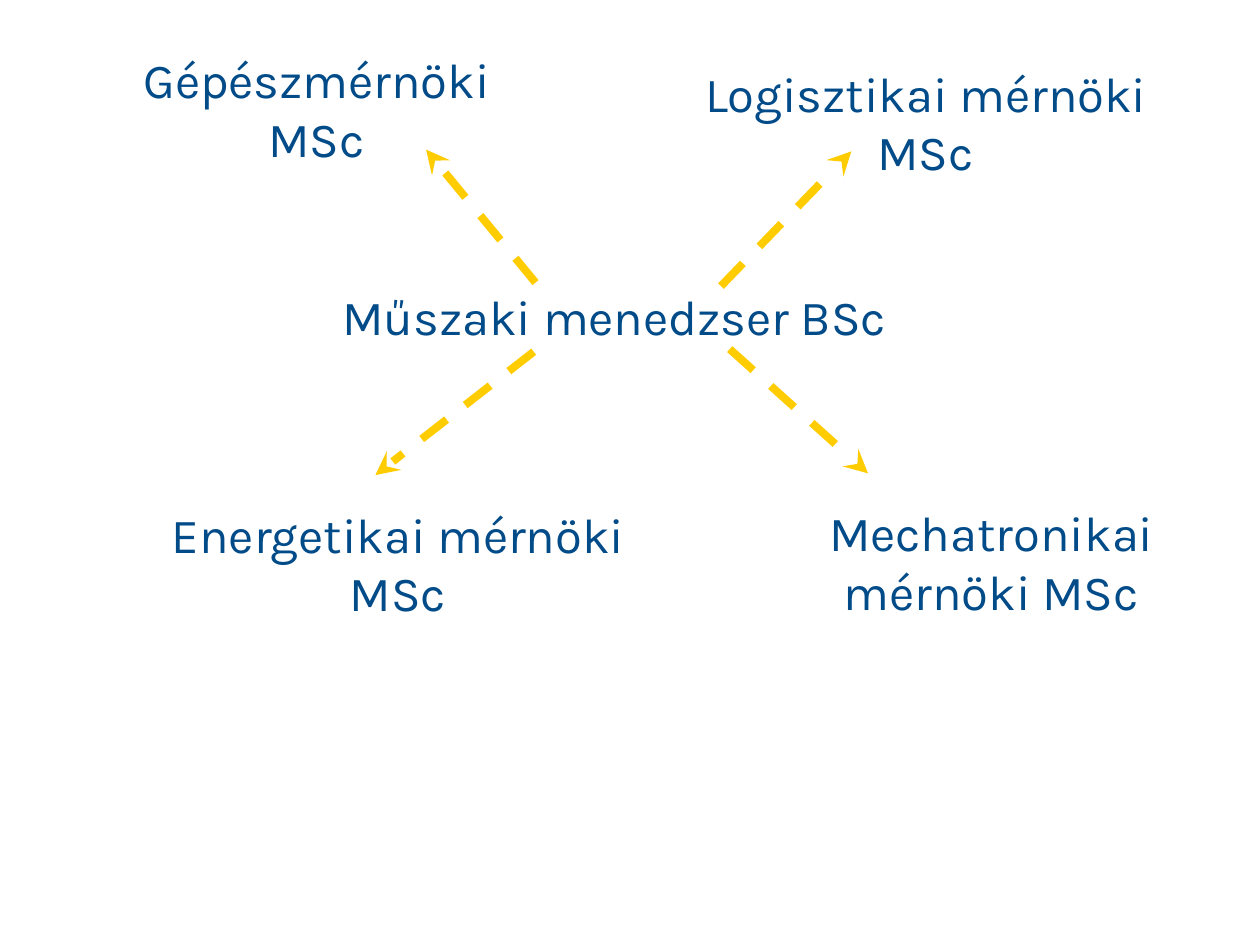
from lxml.etree import SubElement
from pptx import Presentation
from pptx.dml.color import RGBColor
from pptx.enum.dml import MSO_LINE
from pptx.enum.shapes import MSO_CONNECTOR
from pptx.enum.text import MSO_AUTO_SIZE, PP_ALIGN
from pptx.oxml.ns import qn
from pptx.util import Pt

BLUE = RGBColor(0x01, 0x4B, 0x89)
GOLD = RGBColor(0xFF, 0xCC, 0x00)

LABELS = [
    ("Műszaki menedzser BSc", 25, 160, 652, 41),
    ("Energetikai mérnöki MSc", 69, 284.5, 317, 75),
    ("Logisztikai mérnöki MSc", 390, 32.5, 278, 75),
    ("Gépészmérnöki MSc", 58, 25, 246, 75),
    ("Mechatronikai mérnöki MSc", 413, 283.5, 307, 126),
]
ARROWS = [
    (305, 201, 214.5, 271.5),
    (417, 199.5, 496, 270.5),
    (412, 163.5, 486.5, 86.5),
    (306, 161.5, 243.5, 85.5),
]


class Board:
    """Draw degree labels and dashed arrows on one slide."""

    font = {"name": "Karla", "size": Pt(28)}
    frame = {"word_wrap": True, "auto_size": MSO_AUTO_SIZE.SHAPE_TO_FIT_TEXT}
    line = {"width": Pt(4.5), "dash_style": MSO_LINE.DASH}

    def __init__(self, slide):
        self.slide = slide

    def apply(self, item, style):
        for key, value in style.items():
            setattr(item, key, value)

    def label(self, text, *box):
        frame = self.slide.shapes.add_textbox(*map(Pt, box)).text_frame
        self.apply(frame, self.frame)
        para = frame.paragraphs[0]
        para.alignment = PP_ALIGN.CENTER
        run = para.add_run()
        run.text = text
        self.apply(run.font, self.font)
        run.font.color.rgb = BLUE

    def arrow(self, *ends):
        link = self.slide.shapes.add_connector(
            MSO_CONNECTOR.STRAIGHT, *map(Pt, ends))
        link.line.color.rgb = GOLD
        self.apply(link.line, self.line)
        props = link._element.spPr
        SubElement(props.find(qn("a:ln")), qn("a:tailEnd"), type="stealth")
        SubElement(props, qn("a:effectLst"))


def main():
    deck = Presentation()
    deck.slide_width, deck.slide_height = Pt(720), Pt(540)
    board = Board(deck.slides.add_slide(deck.slide_layouts[6]))
    for label in LABELS:
        board.label(*label)
    for arrow in ARROWS:
        board.arrow(*arrow)
    deck.save("out.pptx")


if __name__ == "__main__":
    main()
